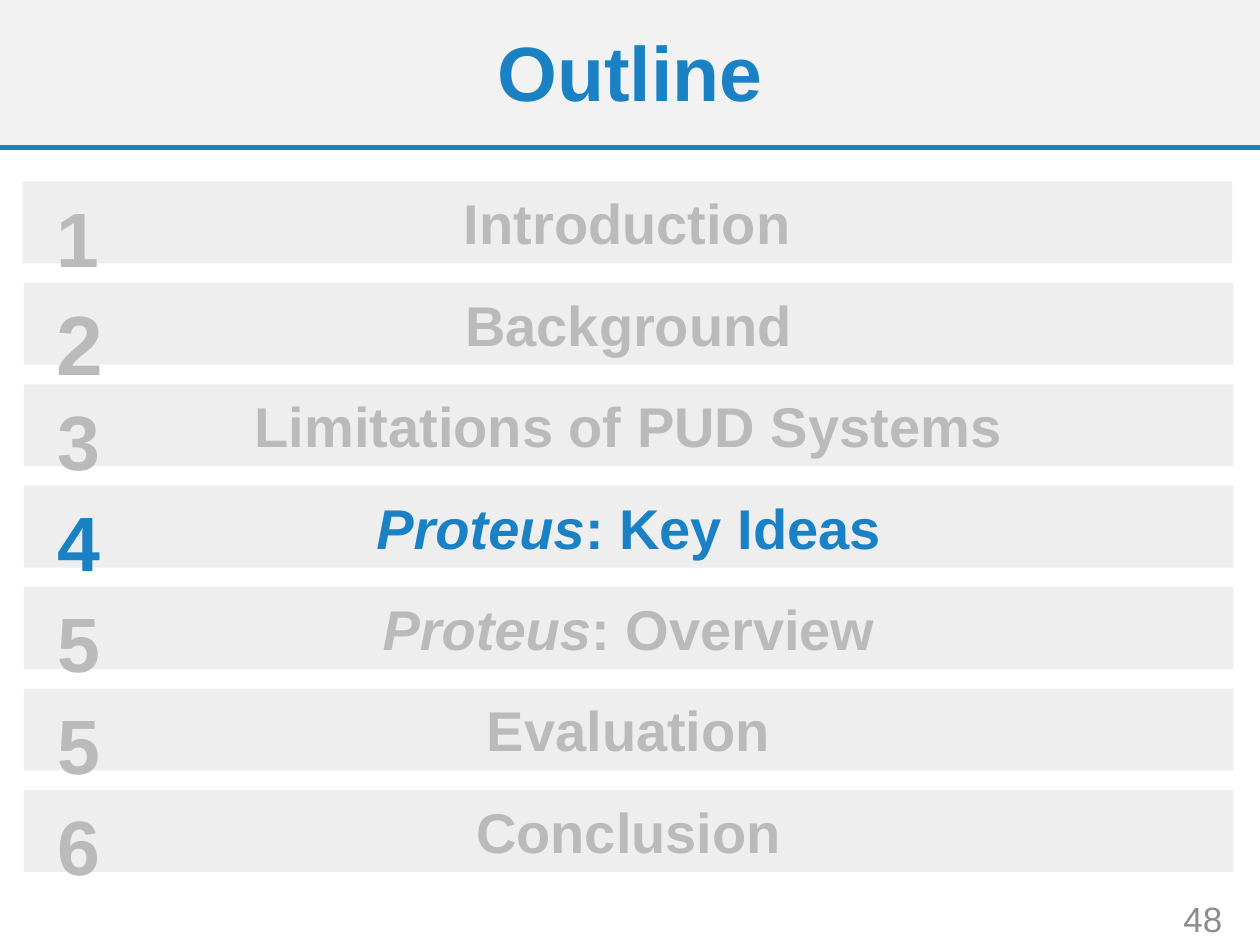
import pptx
import pptx.util
import pptx.dml.color
import pptx.enum.shapes
import pptx.enum.text
from lxml import etree
from pptx.util import Inches, Pt

BLUE, GRAY = "1A82C4", "BABABA"
ALIGN = pptx.enum.text.PP_ALIGN
ANCHOR = pptx.enum.text.MSO_ANCHOR
RECT = pptx.enum.shapes.MSO_SHAPE.RECTANGLE
ITEMS = [
    ("1", "", "Introduction"),
    ("2", "", "Background"),
    ("3", "", "Limitations of PUD Systems"),
    ("4", "Proteus", ": Key Ideas"),
    ("5", "Proteus", ": Overview"),
    ("5", "", "Evaluation"),
    ("6", "", "Conclusion"),
]


def rgb(code):
    """Turn a hex string into a colour."""
    return pptx.dml.color.RGBColor.from_string(code)


def style(font, size, color, bold=True):
    """Set the look of a font."""
    font.name, font.size, font.bold = "Arial", Pt(size), bold
    font.color.rgb = rgb(color)


def write(shape, parts, size, color, bold=True, align=ALIGN.CENTER, anchor=ANCHOR.MIDDLE):
    """Write one paragraph from (text, italic) parts."""
    frame = shape.text_frame
    frame.word_wrap = True
    frame.auto_size = pptx.enum.text.MSO_AUTO_SIZE.NONE
    frame.vertical_anchor = anchor
    para = frame.paragraphs[0]
    para.alignment = align
    for text, slant in parts:
        run = para.add_run()
        run.text = text
        style(run.font, size, color, bold)
        run.font.italic = slant
    return frame


def add_bar(shapes, left, top, width, height, color):
    """Add a plain filled rectangle."""
    bar = shapes.add_shape(RECT, Inches(left), Inches(top), Inches(width), Inches(height))
    bar.shadow.inherit = False
    bar.fill.solid()
    bar.fill.fore_color.rgb = rgb(color)
    bar.line.fill.background()
    return bar


def add_rule(shapes, top, color):
    """Add a line across the slide."""
    kind = pptx.enum.shapes.MSO_CONNECTOR.STRAIGHT
    rule = shapes.add_connector(kind, 0, Inches(top), Inches(10), Inches(top))
    rule.line.color.rgb = rgb(color)
    rule.line.width = Pt(3)
    props = rule.element.spPr
    etree.SubElement(props, pptx.oxml.ns.qn("a:effectLst"))


def add_head(slide):
    """Add the header band, its rule and the title."""
    title = slide.shapes.title
    band = add_bar(slide.shapes, 0, 0, 10, 1.17, "F2F2F2")
    title.element.addprevious(band.element)
    add_rule(slide.shapes, 1.17, "1982C3")
    title.left, title.top = 0, 0
    title.width, title.height = Inches(10), Inches(1.21)
    frame = write(title, [("Outline", False)], 44, BLUE)
    frame.paragraphs[0].line_spacing = 0.9


def add_item(slide, left, top, item, color):
    """Add one numbered outline row."""
    mark, name, rest = item
    shapes = slide.shapes.add_group_shape().shapes
    bar = add_bar(shapes, left, top, 9.6, 0.65, "EEEEEE")
    parts = [(name, True), (rest, False)] if name else [(rest, False)]
    write(bar, parts, 32, color)
    box = shapes.add_textbox(Inches(left), Inches(top), Inches(0.88), Inches(0.65))
    size = 48 if mark == "2" else 44
    frame = write(box, [(mark, False)], size, color, anchor=ANCHOR.TOP)
    frame.margin_top, frame.margin_bottom = Inches(0.07), 0


def add_page(slide, text):
    """Add the page number."""
    box = slide.shapes.add_textbox(Inches(8.72), Inches(7.09), Inches(1.08), Inches(0.4))
    write(box, [(text, False)], 20, "8C8C8C", False, ALIGN.RIGHT)


def main():
    """Build and save the slide."""
    deck = pptx.Presentation()
    deck.slide_width, deck.slide_height = Inches(10), Inches(7.5)
    slide = deck.slides.add_slide(deck.slide_layouts[5])
    add_head(slide)
    for row, item in enumerate(ITEMS):
        left = 0.19 if row else 0.18
        color = BLUE if item[0] == "4" else GRAY
        add_item(slide, left, 1.44 + 0.805 * row, item, color)
    add_page(slide, "48")
    deck.save("out.pptx")


if __name__ == "__main__":
    main()
